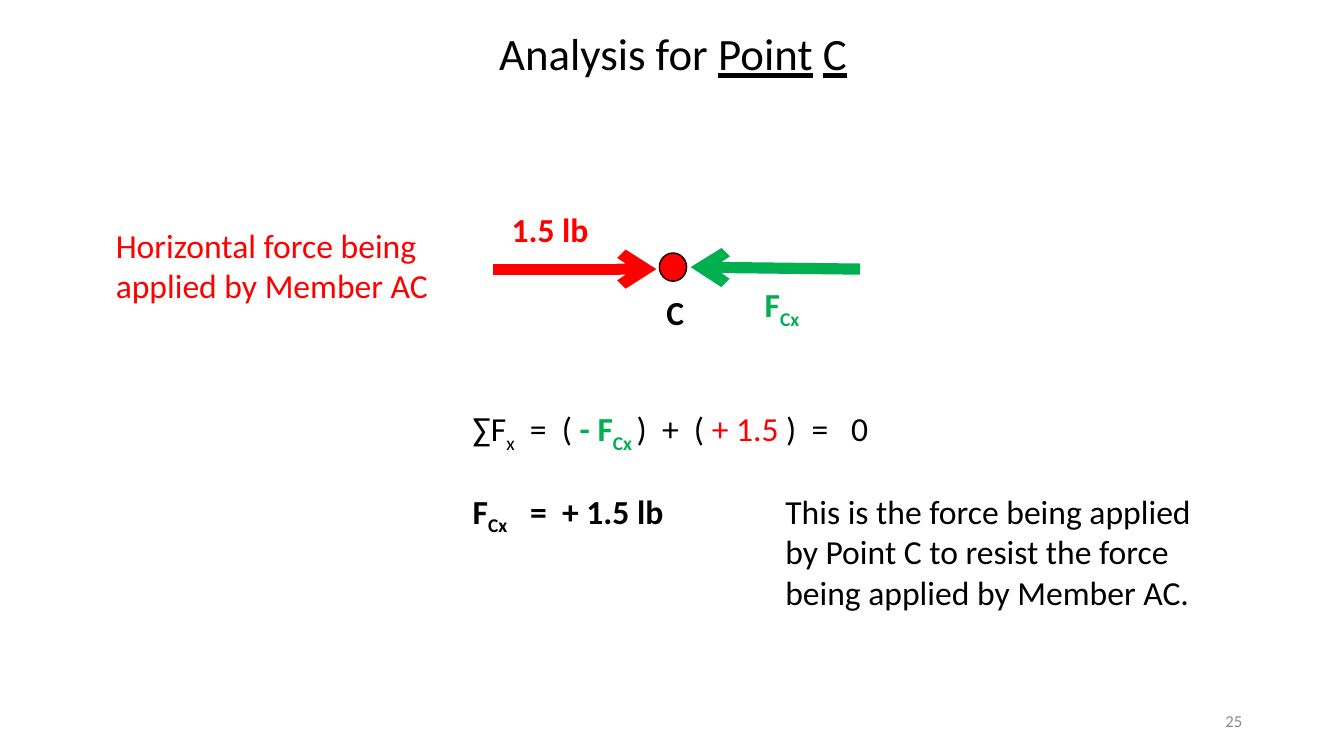
from dataclasses import dataclass, field
from typing import Any

import pptx
import pptx.dml.color
import pptx.enum.dml
import pptx.enum.shapes
import pptx.enum.text
import pptx.oxml
import pptx.oxml.ns
import pptx.slide
import pptx.util
from pptx.util import Inches

RGBColor = pptx.dml.color.RGBColor
ANCHOR = pptx.enum.text.MSO_ANCHOR
ALIGN = pptx.enum.text.PP_ALIGN
AUTO_SIZE = pptx.enum.text.MSO_AUTO_SIZE

BLACK = RGBColor(0x00, 0x00, 0x00)
RED = RGBColor(0xFF, 0x00, 0x00)
GREEN = RGBColor(0x00, 0xB0, 0x50)
GRAY = RGBColor(0x8C, 0x8C, 0x8C)

FONT = "Calibri"
SUBSCRIPT = "-25000"
BOLD = {"bold": True}
UNDERLINED = {"underline": True}


@dataclass
class Span:
    text: str
    color: RGBColor = BLACK
    formats: dict[str, Any] = field(default_factory=dict)
    subscript: bool = False


@dataclass
class Label:
    left: float
    top: float
    width: float
    height: float
    spans: list[Span]
    size: int = 24
    align: ALIGN = ALIGN.LEFT
    anchor: ANCHOR = ANCHOR.TOP
    auto_size: AUTO_SIZE = AUTO_SIZE.SHAPE_TO_FIT_TEXT


@dataclass
class Force:
    start: tuple[float, float]
    end: tuple[float, float]
    color: RGBColor


FORCES = [
    Force((4.89, 2.67), (6.51, 2.67), RED),
    Force((8.53, 2.67), (6.85, 2.65), GREEN),
]

LABELS = [
    Label(9.42, 6.95, 3, 0.4, [Span("25", GRAY)], 12, ALIGN.RIGHT,
          ANCHOR.MIDDLE, AUTO_SIZE.NONE),
    Label(6.51, 2.85, 0.48, 0.5, [Span("C", BLACK, BOLD)]),
    Label(4.9, 2.02, 1.12, 0.5, [Span(" 1.5 lb", RED, BOLD)]),
    Label(7.41, 2.77, 1.12, 0.5,
          [Span(" F", GREEN, BOLD), Span("Cx", GREEN, BOLD, True)]),
    Label(2.74, 0.21, 7.87, 0.64,
          [Span("Analysis for "), Span("Point", BLACK, UNDERLINED),
           Span(" "), Span("C", BLACK, UNDERLINED)], 32, ALIGN.CENTER),
    Label(4.59, 4, 4.44, 0.5,
          [Span("∑F"), Span("x", subscript=True), Span("  =  ( "),
           Span("- F", GREEN, BOLD), Span("Cx ", GREEN, BOLD, True),
           Span(")  +  ( "), Span("+ 1.5 ", RED), Span(")  =   0")]),
    Label(4.59, 4.82, 2.77, 0.5,
          [Span("F", BLACK, BOLD), Span("Cx", BLACK, BOLD, True),
           Span("   =  + 1.5 lb", BLACK, BOLD)]),
    Label(1.05, 2.18, 3.43, 0.91,
          [Span("Horizontal force being applied by Member AC", RED)]),
    Label(7.69, 4.82, 4.58, 1.31,
          [Span("This is the force being applied by Point C to resist "
                "the force being applied by Member AC.")]),
]


def set_formats(target: Any, formats: dict[str, Any]) -> None:
    for name, value in formats.items():
        setattr(target, name, value)


def add_label(page: pptx.slide.Slide, label: Label) -> None:
    box = page.shapes.add_textbox(Inches(label.left), Inches(label.top),
                                  Inches(label.width), Inches(label.height))
    set_formats(box.text_frame, {"word_wrap": True,
                                 "auto_size": label.auto_size,
                                 "vertical_anchor": label.anchor})
    para = box.text_frame.paragraphs[0]
    para.alignment = label.align
    for span in label.spans:
        run = para.add_run()
        run.text = span.text
        set_formats(run.font, {"name": FONT,
                               "size": pptx.util.Pt(label.size),
                               **span.formats})
        run.font.color.rgb = span.color
        if span.subscript:
            run._r.get_or_add_rPr().set("baseline", SUBSCRIPT)


def add_force(page: pptx.slide.Slide, force: Force) -> None:
    arrow = page.shapes.add_connector(
        pptx.enum.shapes.MSO_CONNECTOR.STRAIGHT,
        *map(Inches, force.start + force.end))
    arrow.line.color.rgb = force.color
    arrow.line.width = pptx.util.Pt(8)
    line = arrow.line._get_or_add_ln()
    line.append(pptx.oxml.parse_xml(
        f'<a:tailEnd {pptx.oxml.ns.nsdecls("a")} type="arrow"/>'))
    arrow._element.spPr.append(pptx.oxml.parse_xml(
        f'<a:effectLst {pptx.oxml.ns.nsdecls("a")}/>'))


def add_point(page: pptx.slide.Slide) -> None:
    point = page.shapes.add_shape(
        pptx.enum.shapes.MSO_SHAPE.OVAL,
        Inches(6.54), Inches(2.51), Inches(0.27), Inches(0.28))
    point.shadow.inherit = False
    point.fill.solid()
    point.fill.fore_color.rgb = RED
    point.line.color.rgb = BLACK
    point.line.width = pptx.util.Pt(1)


def main() -> None:
    deck = pptx.Presentation()
    set_formats(deck, {"slide_width": Inches(13.33),
                       "slide_height": Inches(7.5)})
    page = deck.slides.add_slide(deck.slide_layouts[6])
    add_point(page)
    for force in FORCES:
        add_force(page, force)
    for label in LABELS:
        add_label(page, label)
    deck.save("out.pptx")


if __name__ == "__main__":
    main()
